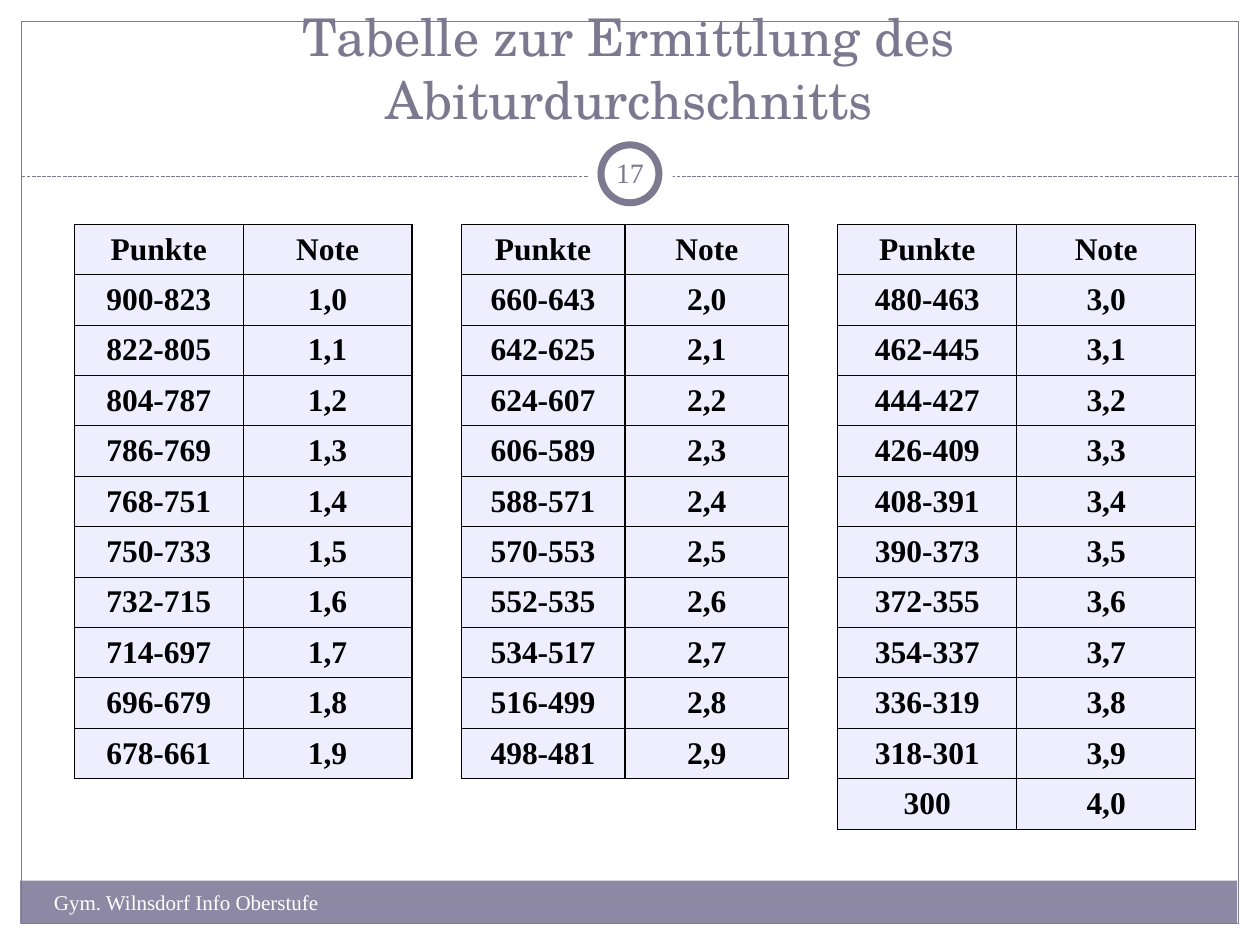
from pptx import Presentation
from pptx.dml.color import RGBColor as RGB
from pptx.enum.dml import MSO_LINE as Dash
from pptx.enum.shapes import MSO_CONNECTOR as Link, MSO_SHAPE as Geo
from pptx.enum.text import MSO_ANCHOR as Anchor, MSO_AUTO_SIZE as Fit, PP_ALIGN as Align
from pptx.oxml import parse_xml
from pptx.oxml.ns import nsdecls, qn
from pptx.util import Inches, Pt

COL = {"white": "FFFFFF", "bar": "8D89A4", "line": "7C7991",
       "head": "7B7890", "cell": "EEEEFF", "ink": "000000"}
SERIF = "Times New Roman"


def style(frame, size, color, font=SERIF, align=Align.LEFT, bold=False):
    para = frame.paragraphs[0]
    para.alignment = align
    for run in para.runs:
        run.font.size = Pt(size)
        run.font.name = font
        run.font.bold = bold
        run.font.color.rgb = RGB.from_string(COL[color])


def draw(geo, box, fill=None, width=None):
    item = slide.shapes.add_shape(geo, *map(Inches, box))
    item.shadow.inherit = False
    if fill:
        item.fill.solid()
        item.fill.fore_color.rgb = RGB.from_string(COL[fill])
    else:
        item.fill.background()
    if width:
        item.line.color.rgb = RGB.from_string(COL["line"])
        item.line.width = Pt(width)
    else:
        item.line.fill.background()


deck = Presentation()
deck.slide_width, deck.slide_height = Inches(10), Inches(7.5)
slide = deck.slides.add_slide(deck.slide_layouts[5])

# Footer bar and frame
draw(Geo.RECTANGLE, (0.16, 6.99, 9.66, 0.34), "bar")
draw(Geo.RECTANGLE, (0.17, 0.17, 9.66, 7.16), width=0.75)

# Dashed divider with the number ring
rule = slide.shapes.add_connector(Link.STRAIGHT, Inches(0.17), Inches(1.4),
                                  Inches(9.83), Inches(1.4))
rule.line.color.rgb = RGB.from_string(COL["line"])
rule.line.width = Pt(0.75)
rule.line.dash_style = Dash.SQUARE_DOT
props = rule._element.spPr
props.append(parse_xml(f"<a:effectLst {nsdecls('a')}/>"))
props.find(qn("a:ln")).find(qn("a:prstDash")).set("val", "sysDash")
draw(Geo.OVAL, (4.67, 1.05, 0.67, 0.67), "white")
draw(Geo.OVAL, (4.77, 1.15, 0.46, 0.46), "white", 4)

# Title, raised above the frame
title = slide.shapes.title
title.left, title.top = Inches(0.33), Inches(0.25)
title.width, title.height = Inches(9.33), Inches(0.83)
frame = title.text_frame
frame.text = "Tabelle zur Ermittlung des Abiturdurchschnitts"
frame.word_wrap = True
frame.auto_size = Fit.NONE
frame.vertical_anchor = Anchor.BOTTOM
style(frame, 29.7, "head", "TeX Gyre Schola", Align.CENTER)
slide.shapes._spTree.append(title._element)

# Grades 1,0 to 4,0: each step below the first spans 18 points
grades = [("900-823", "1,0")]
for step in range(1, 30):
    high = 822 - 18 * (step - 1)
    grades.append((f"{high}-{high - 17}", f"{1 + step // 10},{step % 10}"))
grades.append(("300", "4,0"))

# Three tables: left edge, column width, grades
for left, width, part in ((0.59, 1.34, grades[:10]),
                          (3.66, 1.3, grades[10:20]),
                          (6.65, 1.42, grades[20:])):
    rows = [("Punkte", "Note")] + part
    grid = slide.shapes.add_table(len(rows), 2, Inches(left), Inches(1.78),
                                  Inches(2 * width), Inches(0.4 * len(rows))).table
    grid.first_row = grid.horz_banding = False
    for col in grid.columns:
        col.width = Inches(width)
    for r, row in enumerate(rows):
        grid.rows[r].height = Inches(0.4)
        for c, text in enumerate(row):
            cell = grid.cell(r, c)
            cell.text_frame.text = text
            cell.vertical_anchor = Anchor.MIDDLE
            style(cell.text_frame, 18, "ink", align=Align.CENTER, bold=True)
            tcpr = cell._tc.get_or_add_tcPr()
            for side in ("lnL", "lnR", "lnT", "lnB"):
                tcpr.append(parse_xml(
                    f'<a:{side} {nsdecls("a")} w="{Pt(0.75)}"><a:solidFill>'
                    f'<a:srgbClr val="{COL["ink"]}"/></a:solidFill></a:{side}>'))
            cell.fill.solid()
            cell.fill.fore_color.rgb = RGB.from_string(COL["cell"])

# Slide number
num = slide.shapes.add_textbox(Inches(4.75), Inches(1.13), Inches(0.5), Inches(0.48))
frame = num.text_frame
frame.text = "17"
frame.word_wrap = True
frame.vertical_anchor = Anchor.MIDDLE
frame.margin_left = frame.margin_right = Inches(0.05)
style(frame, 16, "head", align=Align.CENTER)

# Footer text
foot = slide.shapes.add_textbox(Inches(0.33), Inches(7.01), Inches(3.92), Inches(0.4))
foot.text_frame.text = "Gym. Wilnsdorf Info Oberstufe"
foot.text_frame.word_wrap = True
style(foot.text_frame, 12, "white")

deck.save("out.pptx")
